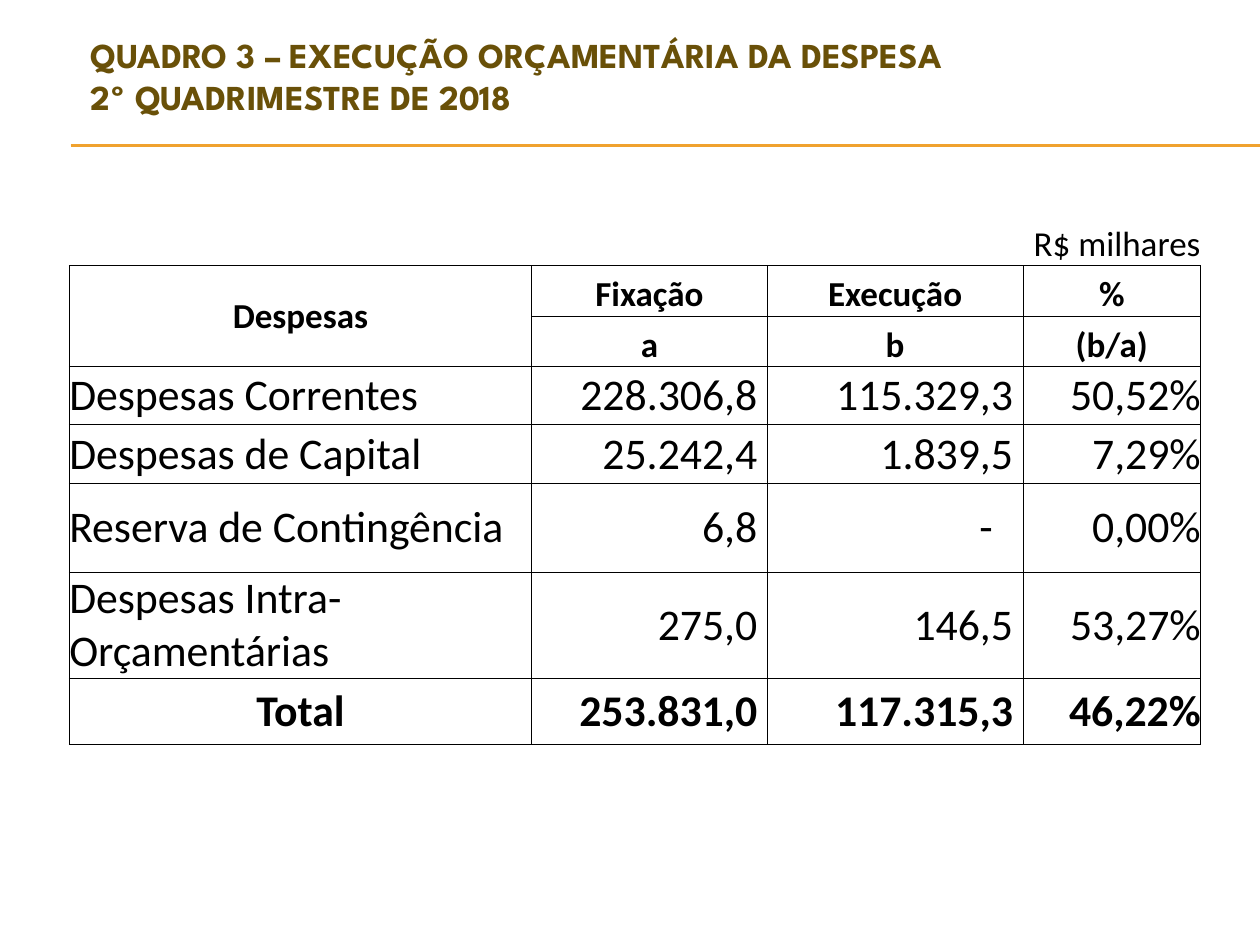
from typing import NamedTuple

from lxml import etree
from pptx import Presentation
from pptx.dml.color import RGBColor
from pptx.enum import shapes, text
from pptx.oxml import ns
from pptx.util import Inches, Pt

BLACK = RGBColor(0x00, 0x00, 0x00)
BROWN = RGBColor(0x69, 0x50, 0x08)
GOLD = RGBColor(0xF0, 0xA2, 0x2E)
LEFT, CENTER, RIGHT = text.PP_ALIGN.LEFT, text.PP_ALIGN.CENTER, text.PP_ALIGN.RIGHT
MIDDLE, BOTTOM = text.MSO_ANCHOR.MIDDLE, text.MSO_ANCHOR.BOTTOM

COL_WIDTHS = (3.67, 0.13, 1.74, 0.99, 1.04, 1.41)
ROW_HEIGHTS = (0.7, 0.4, 0.4, 0.46, 0.47, 0.7, 0.7, 0.52)
NAME, FIXED, SPENT, SHARE = 0, 1, 3, 5  # first grid column of each field
NUMBER_GAP = 0.08
DASH_GAP = 0.24


class Expense(NamedTuple):
    name: str
    fixed: str
    spent: str
    share: str
    total: bool = False


EXPENSES = (
    Expense("Despesas Correntes", "228.306,8", "115.329,3", "50,52%"),
    Expense("Despesas de Capital", "25.242,4", "1.839,5", "7,29%"),
    Expense("Reserva de Contingência", "6,8", "-", "0,00%"),
    Expense("Despesas Intra-Orçamentárias", "275,0", "146,5", "53,27%"),
    Expense("Total", "253.831,0", "117.315,3", "46,22%", total=True),
)
HEADINGS = (
    {FIXED: "Fixação", SPENT: "Execução", SHARE: "%"},
    {FIXED: "a", SPENT: "b", SHARE: "(b/a)"},
)


def write(tf, content: str, *, size: float = 20, bold: bool = False,
          font: str = "Calibri", color: RGBColor = BLACK, align=LEFT) -> None:
    """Write one paragraph; newlines become line breaks."""
    p = tf.paragraphs[0]
    p.alignment = align
    for i, line in enumerate(content.split("\n")):
        if i:
            p.add_line_break()
        r = p.add_run()
        r.text = line
        r.font.size, r.font.bold, r.font.name = Pt(size), bold, font
        r.font.color.rgb = color


def fill_cell(cell, content: str, *, anchor=MIDDLE, gap: float = 0, **style) -> None:
    cell.vertical_anchor = anchor
    cell.margin_right = Inches(gap)
    write(cell.text_frame, content, **style)


def set_borders(cell, visible: str) -> None:
    """Draw thin black borders on the named sides and none on the others."""
    tc_pr = cell._tc.get_or_add_tcPr()
    for i, side in enumerate("LRTB"):
        ln = etree.Element(ns.qn(f"a:ln{side}"), w=str(Pt(0.5)))
        if side in visible:
            fill = etree.SubElement(ln, ns.qn("a:solidFill"))
            etree.SubElement(fill, ns.qn("a:srgbClr"), val=str(BLACK))
        else:
            etree.SubElement(ln, ns.qn("a:noFill"))
        tc_pr.insert(i, ln)


def add_rule(s, y: float) -> None:
    line = s.shapes.add_connector(shapes.MSO_CONNECTOR.STRAIGHT,
                                  Inches(0.56), Inches(y), Inches(10), Inches(y))
    line.line.color.rgb = GOLD
    line.line.width = Pt(0.75)
    etree.SubElement(line._element.spPr, ns.qn("a:effectLst"))


def add_title(s, content: str) -> None:
    sp = s.shapes.title
    sp.left, sp.top, sp.width, sp.height = map(Inches, (0.62, 0.23, 8.5, 0.74))
    tf = sp.text_frame
    tf.word_wrap = True
    tf.auto_size = text.MSO_AUTO_SIZE.NONE
    tf.vertical_anchor = MIDDLE
    write(tf, content, bold=True, font="League Spartan", color=BROWN)


def add_grid(s):
    """Add the bare table with its sizes, borders and merged cells."""
    frame = s.shapes.add_table(len(ROW_HEIGHTS), len(COL_WIDTHS), Inches(0.55), Inches(1.41),
                               Inches(sum(COL_WIDTHS)), Inches(sum(ROW_HEIGHTS)))
    table = frame.table
    table.first_row = table.horz_banding = False
    for col, width in zip(table.columns, COL_WIDTHS):
        col.width = Inches(width)
    for i, (row, height) in enumerate(zip(table.rows, ROW_HEIGHTS)):
        row.height = Inches(height)
        for cell in row.cells:
            cell.margin_left = cell.margin_right = cell.margin_top = cell.margin_bottom = 0
            cell.fill.background()
            set_borders(cell, "LRTB" if i else "B")
        if i:
            for col in (FIXED, SPENT):
                table.cell(i, col).merge(table.cell(i, col + 1))
    table.cell(1, NAME).merge(table.cell(2, NAME))
    return table


def fill_expense(table, row: int, item: Expense) -> None:
    style = {"size": 25, "bold": item.total}
    fill_cell(table.cell(row, NAME), item.name, align=CENTER if item.total else LEFT, **style)
    for col, value in ((FIXED, item.fixed), (SPENT, item.spent)):
        fill_cell(table.cell(row, col), value, align=RIGHT,
                  gap=DASH_GAP if value == "-" else NUMBER_GAP, **style)
    fill_cell(table.cell(row, SHARE), item.share, align=RIGHT, **style)


def main() -> None:
    prs = Presentation()
    prs.slide_width, prs.slide_height = Inches(10), Inches(7.5)
    s = prs.slides.add_slide(prs.slide_layouts[5])

    # Heading and rules
    for y in (1.15, 1.16):
        add_rule(s, y)
    add_title(s, "QUADRO 3 – EXECUÇÃO ORÇAMENTÁRIA DA DESPESA\n2º QUADRIMESTRE DE 2018")

    # Table headings
    table = add_grid(s)
    fill_cell(table.cell(0, SHARE), "R$ milhares", anchor=BOTTOM, align=RIGHT)
    fill_cell(table.cell(1, NAME), "Despesas", bold=True, align=CENTER)
    for row, labels in enumerate(HEADINGS, start=1):
        for col, label in labels.items():
            fill_cell(table.cell(row, col), label, anchor=BOTTOM, bold=True, align=CENTER)

    # Expense rows
    for row, item in enumerate(EXPENSES, start=3):
        fill_expense(table, row, item)

    prs.save("out.pptx")


if __name__ == "__main__":
    main()
